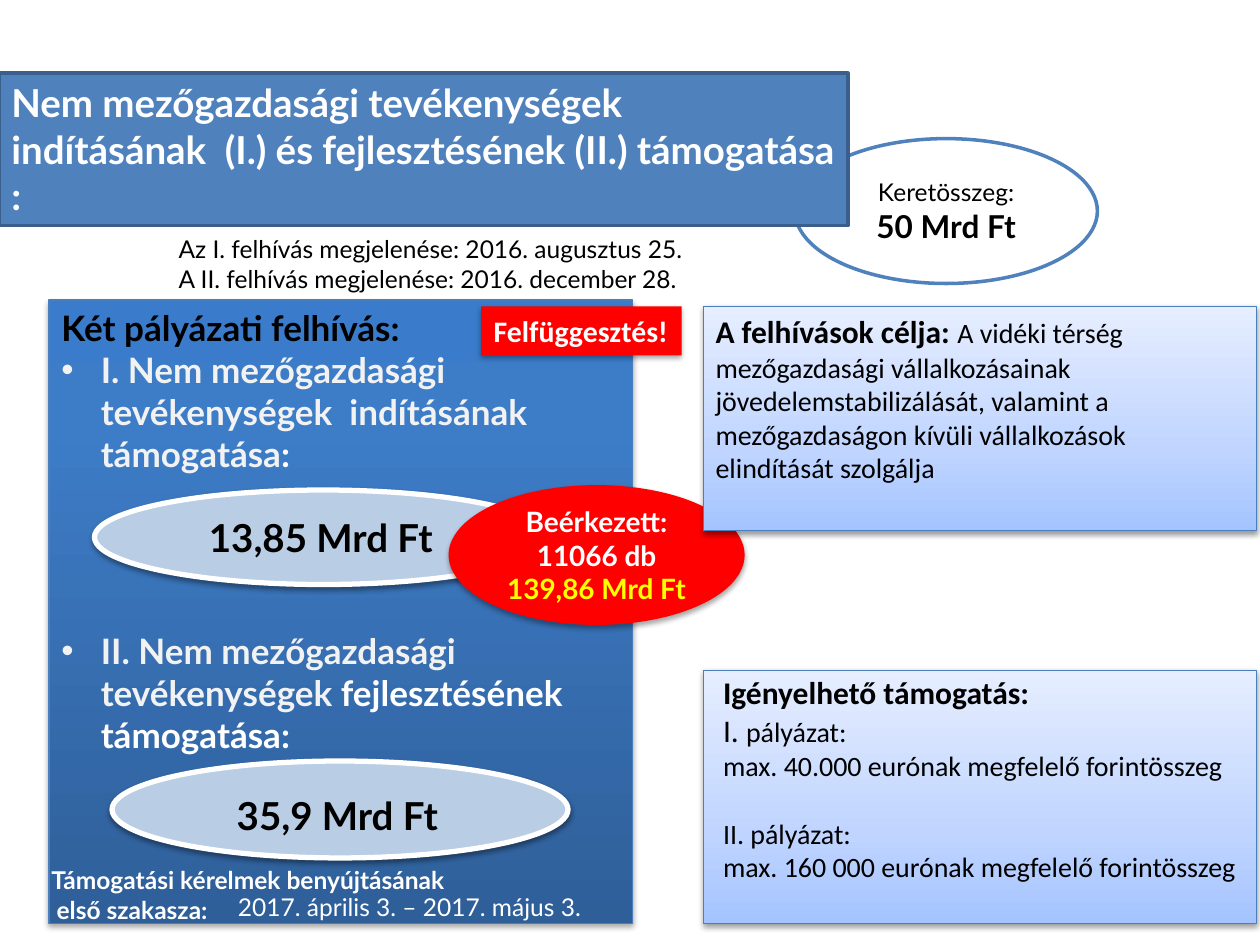
from lxml import etree
from pptx import Presentation
from pptx.dml.color import RGBColor
from pptx.enum.shapes import MSO_SHAPE
from pptx.enum.text import MSO_ANCHOR, PP_ALIGN
from pptx.oxml.ns import qn
from pptx.util import Pt

RECT, OVAL = MSO_SHAPE.RECTANGLE, MSO_SHAPE.OVAL
TOP, MIDDLE = MSO_ANCHOR.TOP, MSO_ANCHOR.MIDDLE
LEFT, CENTER = PP_ALIGN.LEFT, PP_ALIGN.CENTER

THEME = {
    "black": "000000", "white": "FFFFFF", "pale": "F2F2F2",
    "blue": "4F81BD", "navy": "3A5F8C", "edge": "4B7EBC",
    "mist": "B9CDE5", "red": "FF0000", "yellow": "FFFF00",
    "deep": [(0, "2F5F99"), (80, "3D7CC7"), (100, "3A7CCB")],
    "light": [(0, "A4C4FF"), (35, "BFD4FF"), (100, "E6EEFF")],
    "main": "Lato", "side": "Calibri",
    "small": 14, "body": 16, "tag": 17, "lead": 18, "large": 20, "head": 22,
}
SMALL, BODY, TAG, LEAD, LARGE, HEAD = (
    THEME[n] for n in ("small", "body", "tag", "lead", "large", "head"))

deck = Presentation()
deck.slide_width, deck.slide_height = Pt(720), Pt(540)
slide = deck.slides.add_slide(deck.slide_layouts[5])
shapes = slide.shapes


def draw(kind, place, fill, line=None, width=0, shade=None):
    shape = shapes.add_shape(kind, *map(Pt, place))
    shape.shadow.inherit = False
    if isinstance(THEME[fill], list):
        shape.fill.gradient()
        shape.fill.gradient_angle = 90
        stops = shape._element.spPr.find(".//" + qn("a:gsLst"))
        for stop in list(stops):
            stops.remove(stop)
        for pos, tone in THEME[fill]:
            stop = etree.SubElement(stops, qn("a:gs"), pos=str(pos * 1000))
            etree.SubElement(stop, qn("a:srgbClr"), val=tone)
    else:
        shape.fill.solid()
        shape.fill.fore_color.rgb = RGBColor.from_string(THEME[fill])
    if line:
        shape.line.color.rgb = RGBColor.from_string(THEME[line])
        shape.line.width = Pt(width)
    else:
        shape.line.fill.background()
    if shade:
        alpha, dist = shade
        effect = shape._element.spPr.find(qn("a:effectLst"))
        outer = etree.SubElement(
            effect, qn("a:outerShdw"), blurRad=str(Pt(3.1)),
            dist=str(Pt(dist)), dir="5400000", rotWithShape="0")
        tone = etree.SubElement(outer, qn("a:srgbClr"), val=THEME["black"])
        etree.SubElement(tone, qn("a:alpha"), val=str(alpha * 1000))
    return shape


def write(shape, lines, font="main", align=LEFT, anchor=TOP, wrap=True):
    frame = shape.text_frame
    frame.word_wrap = wrap
    frame.vertical_anchor = anchor
    for i, (runs, size, bold, tone, *rest) in enumerate(lines):
        para = frame.add_paragraph() if i else frame.paragraphs[0]
        para.alignment = align
        look = rest[0] if rest else {}
        if "gap" in look:
            para.space_before = Pt(look["gap"])
        props = para._p.get_or_add_pPr()
        if "left" in look:
            props.set("marL", str(Pt(look["left"])))
        if "hang" in look:
            props.set("indent", str(Pt(-look["hang"])))
            etree.SubElement(props, qn("a:buFont"), typeface="Arial")
            etree.SubElement(props, qn("a:buChar"), char="•")
        para.font.name = THEME[font]
        if size:
            para.font.size = Pt(size)
        if bold is not None:
            para.font.bold = bold
        if tone:
            para.font.color.rgb = RGBColor.from_string(THEME[tone])
        for text, *style in [(runs,)] if isinstance(runs, str) else runs:
            run = para.add_run()
            run.text = text
            if style:
                points, heavy, shade = style
                if points:
                    run.font.size = Pt(points)
                if heavy is not None:
                    run.font.bold = heavy
                if shade:
                    run.font.color.rgb = RGBColor.from_string(THEME[shade])


SOFT, HARD = (38, 1.6), (35, 1.8)

fund = draw(OVAL, (454.3, 79.2, 172.8, 82.8), "white", "blue", 2)
write(fund, [("Keretösszeg:", SMALL, False, "black"),
             ("50 Mrd Ft", LEAD, True, "black")], align=CENTER, anchor=MIDDLE)

calls = draw(RECT, (28, 171.4, 333.4, 356.4), "deep", "edge", 0.75, HARD)
write(calls, [
    ("Két pályázati felhívás:", LARGE, True, "black"),
    ([("I. Nem mezőgazdasági tevékenységek  indításának  támogatása",
       None, None, "pale"), (":", None, None, "white")],
     LARGE, True, None, {"left": 22.5, "hang": 22.5}),
    ([("II. Nem mezőgazdasági tevékenységek ", None, None, "pale"),
      ("fejlesztésének támogatása:", None, None, "white")],
     LARGE, True, None, {"left": 22.5, "hang": 22.5, "gap": 88.8}),
])

for place in ((54, 280, 261.4, 54), (64, 434.9, 260.6, 55.4)):
    draw(OVAL, place, "mist", "white", 3, SOFT)
for text, place in (("13,85 Mrd Ft", (112.3, 290.2, 144.7, 33.8)),
                    ("35,9 Mrd Ft", (128.2, 449.3, 131.8, 33.8))):
    label = shapes.add_textbox(*map(Pt, place))
    write(label, [(text, HEAD, True, "black")], wrap=False)

title = shapes.title
title.left, title.top, title.width, title.height = map(
    Pt, (-0.7, 41.8, 485.3, 87.1))
title.fill.solid()
title.fill.fore_color.rgb = RGBColor.from_string(THEME["blue"])
title.line.color.rgb = RGBColor.from_string(THEME["navy"])
title.line.width = Pt(2)
write(title, [("Nem mezőgazdasági tevékenységek  indításának  (I.) és "
               "fejlesztésének (II.) támogatása :", HEAD, True, "white")])
shapes._spTree.append(title._element)

dates = shapes.add_textbox(*map(Pt, (95, 130.3, 315.4, 41)))
write(dates, [
    ("Az I. felhívás megjelenése: 2016. augusztus 25.", SMALL, False, "black"),
    ("A II. felhívás megjelenése: 2016. december 28.", SMALL, False, "black"),
])

count = draw(OVAL, (256.3, 277.2, 169.2, 79.9), "red", shade=HARD)
write(count, [("Beérkezett:", BODY, True, "white"),
              ("11066 db", BODY, True, "white"),
              ("139,86 Mrd Ft", BODY, True, "yellow")],
      align=CENTER, anchor=MIDDLE)

halt = draw(RECT, (275, 175, 114.5, 28.1), "red", shade=HARD)
write(halt, [("Felfüggesztés!", TAG, True, "white")], "side", wrap=False)

draw(RECT, (401.8, 383, 316.1, 144.7), "light", "edge", 0.75, SOFT)
goal = draw(RECT, (401.8, 175, 316.1, 128.2), "light", "edge", 0.75, SOFT)
write(goal, [([
    ("A felhívások célja: ", LEAD, True, None),
    ("A vidéki térség mezőgazdasági vállalkozásainak "
     "jövedelemstabilizálását, valamint a mezőgazdaságon kívüli "
     "vállalkozások elindítását szolgálja", BODY, False, None),
], None, None, "black")], "side")

grant = shapes.add_textbox(*map(Pt, (406.1, 380.9, 311.8, 128.2)))
write(grant, [
    ("Igényelhető támogatás:", LEAD, True, "black"),
    ([("I. ", LEAD, None, None), ("pályázat:", BODY, None, None)],
     None, False, "black"),
    ("max. 40.000 eurónak megfelelő forintösszeg", BODY, False, "black"),
    ("II. pályázat:", BODY, False, "black", {"gap": 19.5}),
    ("max. 160 000 eurónak megfelelő forintösszeg", BODY, False, "black"),
], "side", wrap=False)

phase = shapes.add_textbox(*map(Pt, (22.3, 491, 263.5, 41)))
write(phase, [
    ("Támogatási kérelmek benyújtásának", SMALL, True, "white"),
    ("első szakasza:", SMALL, True, "white", {"left": 3}),
])
term = shapes.add_textbox(*map(Pt, (128.9, 506.2, 231.8, 24.5)))
write(term, [("2017. április 3. – 2017. május 3.", SMALL, False, "white")])

deck.save("out.pptx")
